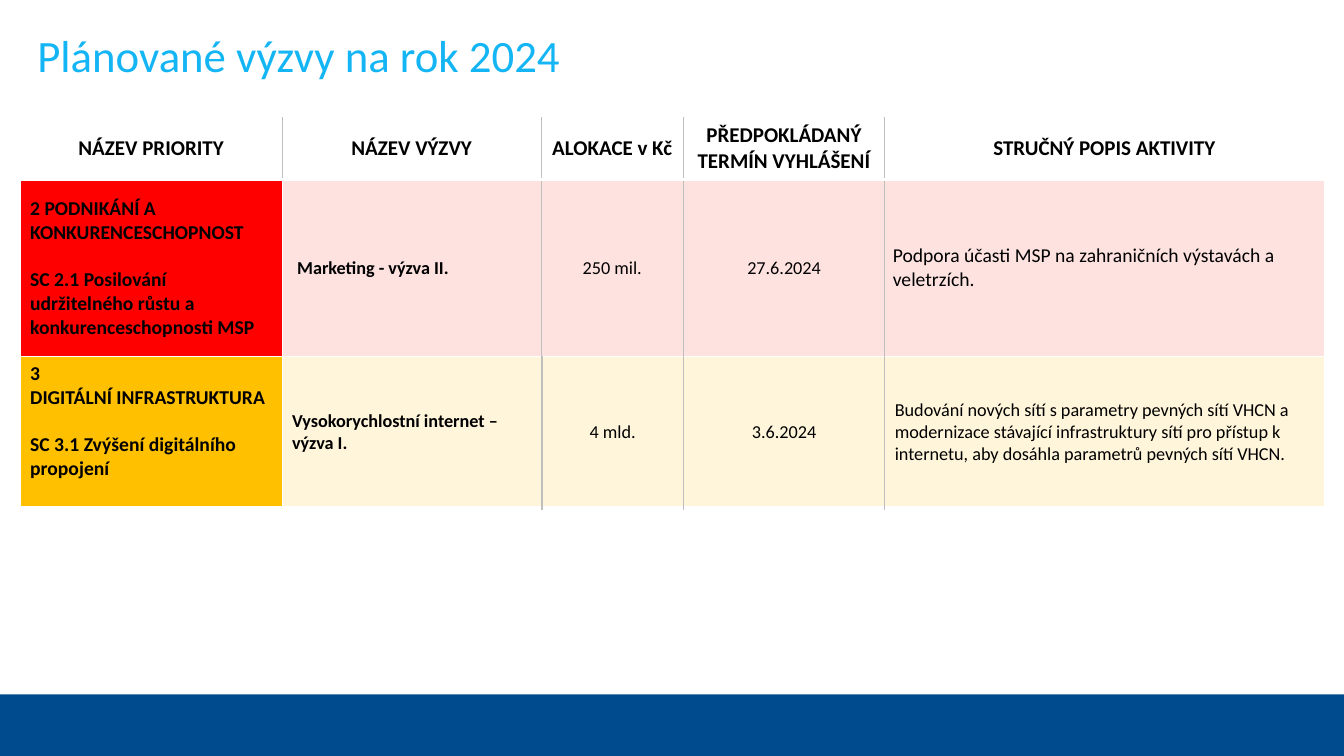
"""Build the slide listing the calls planned for 2024."""
from dataclasses import dataclass

from lxml.etree import SubElement
from pptx import Presentation
from pptx.dml.color import RGBColor
from pptx.enum.shapes import MSO_SHAPE
from pptx.enum.text import MSO_ANCHOR, MSO_AUTO_SIZE, PP_ALIGN
from pptx.oxml.ns import qn
from pptx.slide import Slide
from pptx.table import _Cell
from pptx.util import Cm, Pt


@dataclass(frozen=True)
class Theme:
    """Colours, font and type sizes of the slide."""
    font: str = "Calibri"
    navy: str = "004B8D"
    sky: str = "13B5F4"
    white: str = "FFFFFF"
    black: str = "000000"
    grid: str = "BFBFBF"
    red: str = "FF0000"
    rose: str = "FDE2E0"
    amber: str = "FFC000"
    cream: str = "FFF5DB"
    title: int = 32
    heading: int = 15
    priority: int = 14
    detail: int = 13
    blank_line: int = 17


THEME = Theme()


@dataclass(frozen=True)
class Entry:
    """Text of one cell and how it is set."""
    lines: tuple[str, ...]
    size: int = THEME.detail
    bold: bool = False
    align: PP_ALIGN = PP_ALIGN.LEFT
    anchor: MSO_ANCHOR = MSO_ANCHOR.MIDDLE
    indent: float = 0.25


@dataclass(frozen=True)
class Band:
    """One table row with its fills and lower border."""
    height: float
    entries: tuple[Entry, ...]
    lead_fill: str
    fill: str
    rule: str = THEME.white
    rule_width: int = 3
    header: bool = False


@dataclass(frozen=True)
class CallTable:
    """One table of calls, in centimetres."""
    top: float
    columns: tuple[float, ...]
    bands: tuple[Band, ...]


def heading(text: str) -> Entry:
    """Return a column heading."""
    return Entry((text,), THEME.heading, True, PP_ALIGN.CENTER)


def centred(text: str) -> Entry:
    """Return a centred amount or date."""
    return Entry((text,), align=PP_ALIGN.CENTER)


HEADINGS = Band(
    1.55,
    tuple(heading(text) for text in (
        "NÁZEV PRIORITY", "NÁZEV VÝZVY", "ALOKACE v Kč",
        "PŘEDPOKLÁDANÝ TERMÍN VYHLÁŠENÍ", "STRUČNÝ POPIS AKTIVITY")),
    THEME.white, THEME.white, header=True)

MARKETING = Band(
    4.47,
    (Entry(("2 PODNIKÁNÍ A KONKURENCESCHOPNOST",
            "SC 2.1 Posilování udržitelného růstu a konkurenceschopnosti MSP"),
           THEME.priority, True),
     Entry(("Marketing - výzva II.",), bold=True, indent=0.38),
     centred("250 mil."),
     centred("27.6.2024"),
     Entry(("Podpora účasti MSP na zahraničních výstavách a veletrzích.",),
           THEME.priority, indent=0.2)),
    THEME.red, THEME.rose, THEME.grid, 1)

INTERNET = Band(
    3.81,
    (Entry(("3", "DIGITÁLNÍ INFRASTRUKTURA", "SC 3.1 Zvýšení digitálního propojení"),
           THEME.priority, True, anchor=MSO_ANCHOR.TOP),
     Entry(("Vysokorychlostní internet – výzva I.",), bold=True),
     centred("4 mld."),
     centred("3.6.2024"),
     Entry(("Budování nových sítí s parametry pevných sítí VHCN "
            "a modernizace stávající infrastruktury sítí pro přístup "
            "k internetu, aby dosáhla parametrů pevných sítí VHCN.",))),
    THEME.amber, THEME.cream)

CALL_TABLES = (
    CallTable(2.97, (6.6, 6.53, 3.58, 5.08, 11.07), (HEADINGS, MARKETING)),
    CallTable(8.99, (6.6, 6.55, 3.56, 5.08, 11.07), (INTERNET,)),
)


def rgb(colour: str) -> RGBColor:
    """Turn a hex code into a colour."""
    return RGBColor.from_string(colour)


def set_border(cell: _Cell, side: str, colour: str, width: int = 1) -> None:
    """Draw one side of a cell."""
    line = SubElement(cell._tc.get_or_add_tcPr(), qn(f"a:ln{side}"), w=str(Pt(width)))
    SubElement(SubElement(line, qn("a:solidFill")), qn("a:srgbClr"), val=colour)


def draw_borders(cell: _Cell, band: Band, column: int) -> None:
    """Rule grey lines between columns and white ones around the lead cells."""
    first_ruled = 0 if band.header else 1
    last = len(band.entries) - 1
    set_border(cell, "L", THEME.grid if column > first_ruled else THEME.white)
    set_border(cell, "R", THEME.grid if first_ruled <= column < last else THEME.white)
    set_border(cell, "T", THEME.white)
    set_border(cell, "B", band.rule if column else THEME.white, band.rule_width)


def write_entry(cell: _Cell, entry: Entry) -> None:
    """Write the paragraphs of a cell, with a gap before the last."""
    cell.vertical_anchor = entry.anchor
    cell.margin_left = Cm(entry.indent)
    frame = cell.text_frame
    frame.text = "\n".join(entry.lines)
    for paragraph in frame.paragraphs:
        paragraph.alignment = entry.align
        paragraph.font.name = THEME.font
        paragraph.font.size = Pt(entry.size)
        paragraph.font.bold = entry.bold
        paragraph.font.color.rgb = rgb(THEME.black)
    if len(entry.lines) > 1:
        frame.paragraphs[-1].space_before = Pt(THEME.blank_line)


def draw_calls(slide: Slide, calls: CallTable) -> None:
    """Add one table of calls."""
    height = sum(band.height for band in calls.bands)
    table = slide.shapes.add_table(
        len(calls.bands), len(calls.columns),
        Cm(0.51), Cm(calls.top), Cm(sum(calls.columns)), Cm(height)).table
    table.first_row = False
    table.horz_banding = False
    for column, width in zip(table.columns, calls.columns):
        column.width = Cm(width)
    for row, band in zip(table.rows, calls.bands):
        row.height = Cm(band.height)
        for column, (cell, entry) in enumerate(zip(row.cells, band.entries)):
            draw_borders(cell, band, column)
            cell.fill.solid()
            cell.fill.fore_color.rgb = rgb(band.fill if column else band.lead_fill)
            write_entry(cell, entry)


def draw_backdrop(slide: Slide, width: int) -> None:
    """Lay a white panel over the navy background."""
    slide.background.fill.solid()
    slide.background.fill.fore_color.rgb = rgb(THEME.navy)
    panel = slide.shapes.add_shape(MSO_SHAPE.RECTANGLE, 0, 0, width, Cm(17.5))
    panel.shadow.inherit = False
    panel.fill.solid()
    panel.fill.fore_color.rgb = rgb(THEME.white)
    panel.line.fill.background()
    slide.shapes._spTree.insert(2, panel._element)


def write_title(slide: Slide) -> None:
    """Place and format the title."""
    title = slide.shapes.title
    title.left, title.top, title.width, title.height = Cm(0.94), Cm(0.69), Cm(30.53), Cm(1.37)
    frame = title.text_frame
    frame.text = "Plánované výzvy na rok 2024"
    frame.margin_left = frame.margin_right = frame.margin_top = frame.margin_bottom = 0
    frame.auto_size = MSO_AUTO_SIZE.NONE
    frame.vertical_anchor = MSO_ANCHOR.MIDDLE
    paragraph = frame.paragraphs[0]
    paragraph.alignment = PP_ALIGN.LEFT
    paragraph.font.name = THEME.font
    paragraph.font.size = Pt(THEME.title)
    paragraph.font.color.rgb = rgb(THEME.sky)


def main() -> None:
    """Build and save the presentation."""
    presentation = Presentation()
    presentation.slide_width, presentation.slide_height = Cm(33.87), Cm(19.05)
    slide = presentation.slides.add_slide(presentation.slide_layouts[5])
    draw_backdrop(slide, presentation.slide_width)
    write_title(slide)
    for calls in CALL_TABLES:
        draw_calls(slide, calls)
    presentation.save("out.pptx")


if __name__ == "__main__":
    main()
